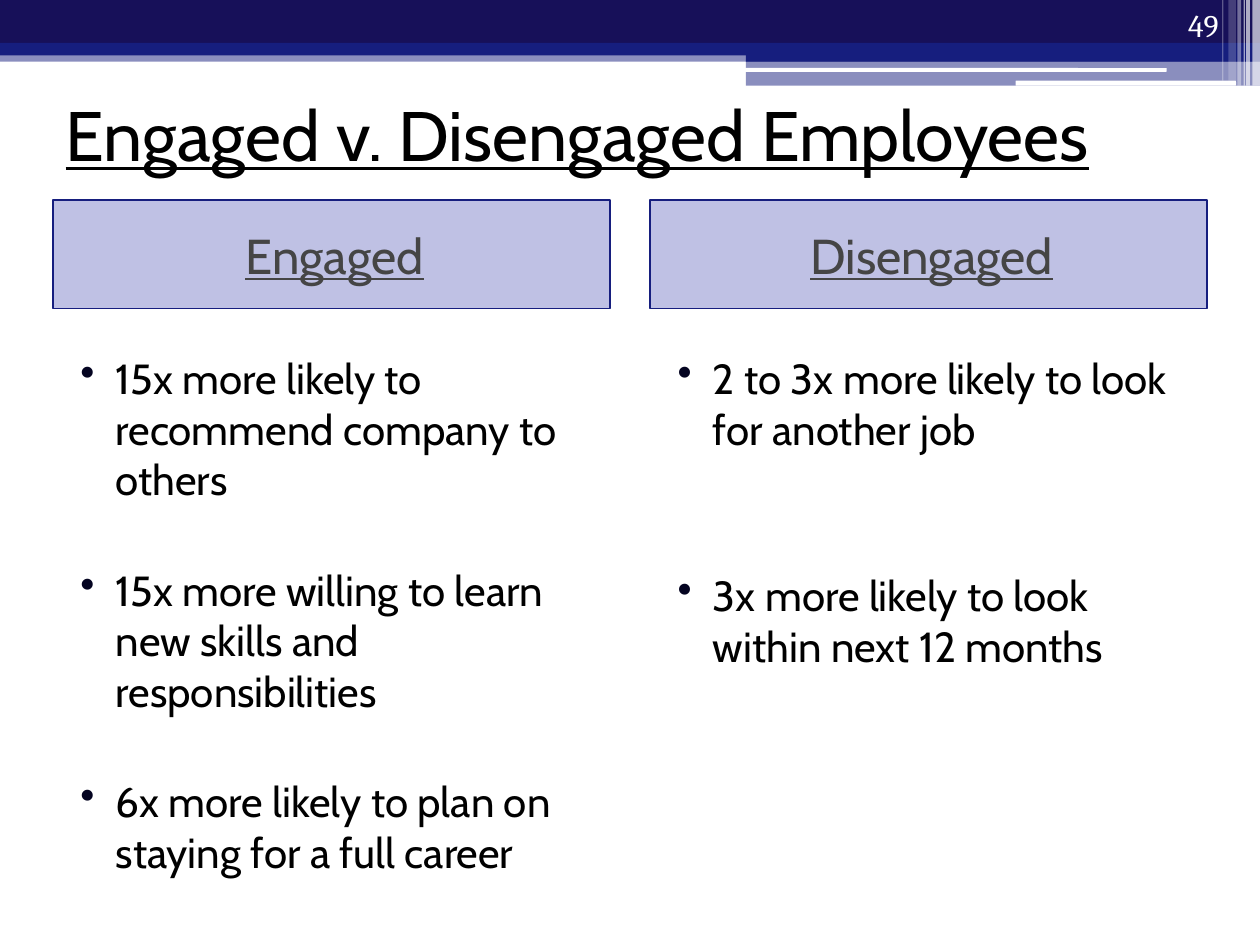
"""Build the slide comparing engaged and disengaged employees."""
from lxml import etree
from pptx import Presentation
from pptx.dml.color import RGBColor
from pptx.enum import shapes, text
from pptx.oxml import ns
from pptx.util import Inches, Pt


def paint(fill, color, opacity=100):
    fill.solid()
    fill.fore_color.rgb = RGBColor.from_string(color)
    if opacity < 100:
        node = fill._xPr.find(".//" + ns.qn("a:srgbClr"))
        etree.SubElement(node, ns.qn("a:alpha"), val=str(opacity * 1000))


def write(paragraph, words, size, color, face="Cabin", underline=False):
    paragraph.text = words
    font = paragraph.font
    font.name, font.size, font.underline = face, Pt(size), underline
    paint(font.fill, color)


NAVY, BLUE, WHITE, BLACK = "171059", "161E7E", "FFFFFF", "000000"
RECT, ROUND = shapes.MSO_SHAPE.RECTANGLE, shapes.MSO_SHAPE.ROUNDED_RECTANGLE

deck = Presentation()
deck.slide_width, deck.slide_height = Inches(10), Inches(7.5)
page = deck.slides.add_slide(deck.slide_layouts[5])

bands = [
    (RECT, 0, 0.4, 10, 0.09, BLUE, 50),
    (RECT, 0, 0, 10, 0.34, NAVY, 100),
    (RECT, 0, 0.34, 10, 0.1, BLUE, 100),
    (RECT, 5.92, 0.39, 4.08, 0.1, BLUE, 100),
    (RECT, 5.92, 0.48, 4.08, 0.2, BLUE, 50),
    (ROUND, 5.91, 0.54, 3.35, 0.03, WHITE, 100),
    (ROUND, 8.06, 0.64, 1.75, 0.04, WHITE, 100),
]
stripes = [
    (9.94, 0.06, 0.68, 65),
    (9.89, 0.03, 0.68, 65),
    (9.87, 0.01, 0.68, 60),
    (9.82, 0.03, 0.68, 40),
    (9.75, 0.06, 0.64, 20),
    (9.7, 0.01, 0.64, 30),
]
bands += [(RECT, left, 0, width, height, WHITE, opacity)
          for left, width, height, opacity in stripes]
for kind, left, top, width, height, color, opacity in bands:
    band = page.shapes.add_shape(kind, Inches(left), Inches(top), Inches(width), Inches(height))
    band.shadow.inherit = False
    band.line.fill.background()
    paint(band.fill, color, opacity)

title = page.shapes.title
title.left, title.top, title.width, title.height = Inches(0.42), Inches(0.66), Inches(9.17), Inches(0.8)
title.text_frame.auto_size = text.MSO_AUTO_SIZE.NONE
title.text_frame.vertical_anchor = text.MSO_ANCHOR.MIDDLE
write(title.text_frame.paragraphs[0], "Engaged v. Disengaged Employees", 40, BLACK, underline=True)
title.text_frame.paragraphs[0].alignment = text.PP_ALIGN.LEFT

columns = [
    (0.42, "Engaged", 34.5, [
        "15x more likely to recommend company to others",
        "15x more willing to learn new skills and responsibilities",
        "6x more likely to plan on staying for a full career",
    ]),
    (5.16, "Disengaged", 66.5, [
        "2 to 3x more likely to look for another job",
        "3x more likely to look within next 12 months",
    ]),
]
for left, heading, gap, points in columns:
    header = page.shapes.add_shape(RECT, Inches(left), Inches(1.59), Inches(4.42), Inches(0.86))
    header.shadow.inherit = False
    paint(header.fill, "000B94", 25)
    paint(header.line.fill, BLUE)
    header.line.width = Pt(1)
    header.text_frame.vertical_anchor = text.MSO_ANCHOR.MIDDLE
    paragraph = header.text_frame.paragraphs[0]
    paragraph.alignment = text.PP_ALIGN.CENTER
    paragraph._p.get_or_add_pPr().set("marL", str(Inches(0.05)))
    write(paragraph, heading, 28, "454545", underline=True)

    box = page.shapes.add_textbox(Inches(left), Inches(2.75), Inches(4.42), Inches(4.47))
    frame = box.text_frame
    frame.word_wrap = True
    for index, point in enumerate(points):
        paragraph = frame.add_paragraph() if index else frame.paragraphs[0]
        properties = paragraph._p.get_or_add_pPr()
        properties.set("marL", str(Inches(0.4)))
        properties.set("indent", str(Inches(-0.28)))
        bullet_color = etree.SubElement(properties, ns.qn("a:buClr"))
        etree.SubElement(bullet_color, ns.qn("a:srgbClr"), val="040421")
        etree.SubElement(properties, ns.qn("a:buChar"), char="•")
        if index:
            paragraph.space_before = Pt(gap)
        write(paragraph, point, 24, BLACK)

number = page.shapes.add_textbox(Inches(8.94), Inches(0), Inches(0.83), Inches(0.4))
number.text_frame.word_wrap = True
number.text_frame.vertical_anchor = text.MSO_ANCHOR.BOTTOM
paragraph = number.text_frame.paragraphs[0]
paragraph.alignment = text.PP_ALIGN.RIGHT
write(paragraph, "49", 18, WHITE, face="Cambria")

deck.save("out.pptx")
